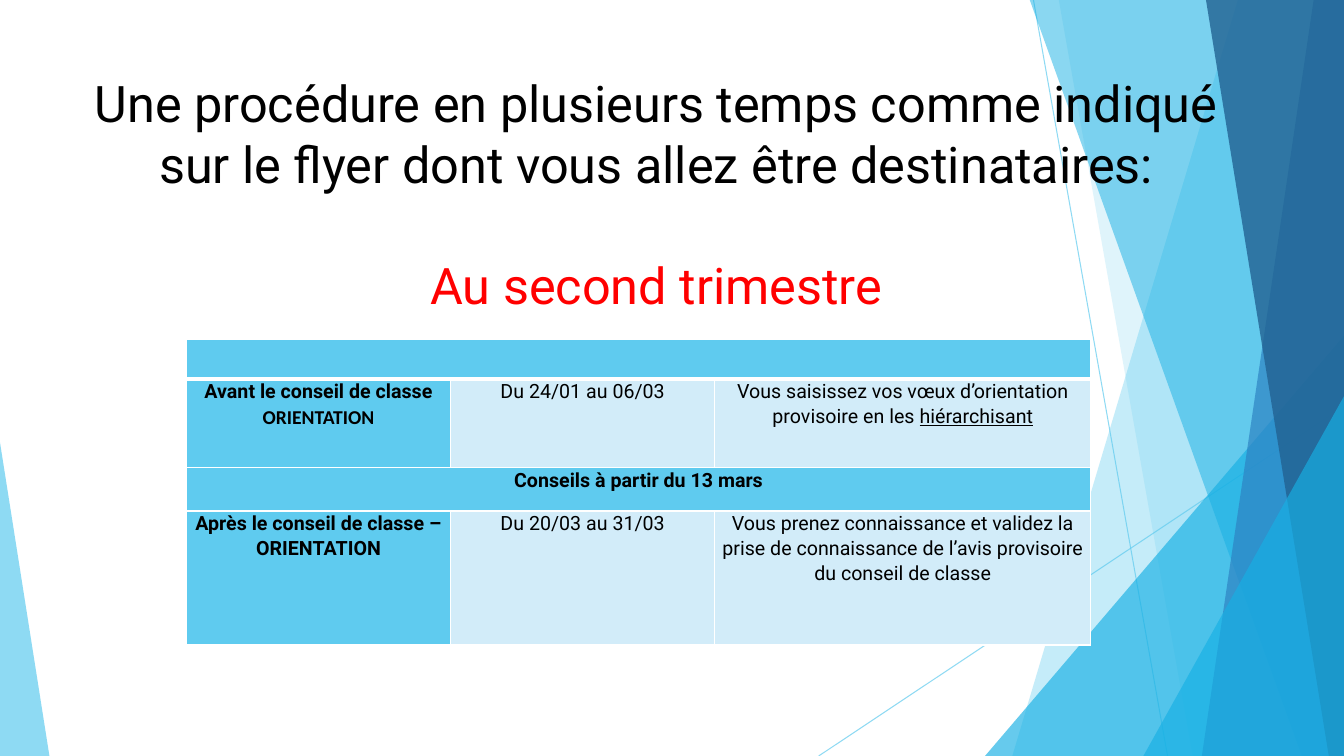
from pptx import Presentation
from pptx import util as u
from pptx.dml.color import RGBColor
from pptx.enum import shapes, text
from pptx.oxml import parse_xml
from pptx.oxml.ns import nsdecls, qn
from lxml import etree

COLORS = {"sky": "5FCBEF", "cyan": "17B0E4", "blue": "2E83C3", "navy": "226292",
          "pale": "D2ECF9", "white": "FFFFFF", "black": "000000", "red": "FF0000"}
WIDTH, HEIGHT = 13.33, 7.5


def rgb(name):
    return RGBColor.from_string(COLORS[name])


def set_alpha(fill, percent):
    """Make a solid shape or line fill partly transparent."""
    color = fill._xPr.find(qn("a:solidFill"))[0]
    etree.SubElement(color, qn("a:alpha")).set("val", str(percent * 1000))


def paint(shape, color, alpha):
    shape.shadow.inherit = False
    shape.fill.solid()
    shape.fill.fore_color.rgb = rgb(color)
    set_alpha(shape.fill, alpha)
    shape.line.fill.background()


def write(para, words, size=14, font="Roboto", color="black", bold=False,
          underline=False, spacing=1.0, before=0):
    """Add a formatted span to a centred paragraph."""
    para.alignment = text.PP_ALIGN.CENTER
    para.line_spacing = spacing
    para.space_before = u.Pt(before)
    span = para.add_run()
    span.text = words
    span.font.size = u.Pt(size)
    span.font.name = font
    span.font.color.rgb = rgb(color)
    span.font.bold = bold
    span.font.underline = underline


# Background decoration
def add_thin_line(page, start, end):
    line = page.shapes.add_connector(
        shapes.MSO_CONNECTOR.STRAIGHT, *(u.Inches(v) for v in start + end))
    line.line.color.rgb = rgb("sky")
    line.line.width = u.Pt(0.75)
    set_alpha(line.line.fill, 70)
    etree.SubElement(line._element.spPr, qn("a:effectLst"))


def add_band(page, top_x, bottom_x, color, alpha):
    """A slanted band reaching the right edge of the page."""
    top = -0.01
    corners = [(WIDTH, top), (WIDTH, HEIGHT), (bottom_x, HEIGHT)]
    outline = page.shapes.build_freeform(u.Inches(top_x), u.Inches(top))
    outline.add_line_segments([(u.Inches(x), u.Inches(y)) for x, y in corners])
    paint(outline.convert_to_shape(), color, alpha)


def add_corner(page, left, top, width, apex, color, alpha):
    """A triangle standing on the bottom edge of the page."""
    corner = page.shapes.add_shape(
        shapes.MSO_SHAPE.ISOSCELES_TRIANGLE, u.Inches(left), u.Inches(top),
        u.Inches(width), u.Inches(HEIGHT - top))
    corner.adjustments[0] = apex
    paint(corner, color, alpha)


def add_decoration(page):
    add_thin_line(page, (10.25, 0), (11.58, HEIGHT))
    add_thin_line(page, (WIDTH, 4.03), (8.12, HEIGHT))
    add_band(page, 12.28, 10.04, "sky", 36)
    add_band(page, 10.5, 11.83, "sky", 20)
    add_corner(page, 9.77, 3.33, 3.56, 1, "cyan", 66)
    add_band(page, 10.21, 12.91, "cyan", 50)
    add_band(page, 13.03, 11.92, "blue", 70)
    add_band(page, 11.96, 13.18, "navy", 80)
    add_corner(page, 11.34, 3.93, 1.99, 1, "cyan", 66)
    add_corner(page, 0, 4.39, 0.49, 0, "sky", 70)


# Title
def add_title(page, left, top, width, height):
    title = page.shapes.title
    title.left, title.top, title.width, title.height = (
        u.Inches(v) for v in (left, top, width, height))
    page.shapes._spTree.append(title._element)  # bring in front of the bands
    frame = title.text_frame
    frame.word_wrap = True
    frame.auto_size = text.MSO_AUTO_SIZE.NONE
    frame.vertical_anchor = text.MSO_ANCHOR.TOP
    write(frame.paragraphs[0], "Une procédure en plusieurs temps comme indiqué "
          "sur le flyer dont vous allez être destinataires:", size=36)
    write(frame.add_paragraph(), "Au second trimestre", size=36, color="red", before=43)


# Schedule table: a cell is a list of paragraphs, a paragraph a list of spans
BOLD = {"bold": True}
SCHEDULE = [
    [[]],
    [[[("Avant le conseil de classe", BOLD)],
      [("ORIENTATION", {"bold": True, "font": "Calibri"})]],
     [[("Du 24/01 au 06/03", {})]],
     [[("Vous saisissez vos vœux d’orientation provisoire en les ", {}),
       ("hiérarchisant", {"underline": True})]]],
    [[[("Conseils à partir du 13 mars", BOLD)]]],
    [[[("Après le conseil de classe –", BOLD)], [("ORIENTATION", BOLD)]],
     [[("Du 20/03 au 31/03", {})]],
     [[("Vous prenez connaissance et validez la prise de connaissance "
        "de l’avis provisoire du conseil de classe", {})]]],
]
COLUMN_WIDTHS = [2.62, 2.62, 3.73]
ROW_HEIGHTS = [0.39, 0.88, 0.43, 1.33]


def format_cell(cell, color, top_border, bottom_border):
    cell.margin_left = cell.margin_right = u.Inches(0.07)
    cell.margin_top = cell.margin_bottom = 0
    properties = cell._tc.get_or_add_tcPr()
    for side, points in zip("LRTB", (1, 1, top_border, bottom_border)):
        properties.append(parse_xml(
            f'<a:ln{side} {nsdecls("a")} w="{u.Pt(points)}"><a:solidFill>'
            f'<a:srgbClr val="{COLORS["white"]}"/></a:solidFill></a:ln{side}>'))
    cell.fill.solid()
    cell.fill.fore_color.rgb = rgb(color)


def add_schedule(page, left, top):
    table = page.shapes.add_table(
        len(ROW_HEIGHTS), len(COLUMN_WIDTHS), u.Inches(left), u.Inches(top),
        u.Inches(sum(COLUMN_WIDTHS)), u.Inches(sum(ROW_HEIGHTS))).table
    for column, width in zip(table.columns, COLUMN_WIDTHS):
        column.width = u.Inches(width)
    last = len(COLUMN_WIDTHS) - 1
    for r, (height, contents) in enumerate(zip(ROW_HEIGHTS, SCHEDULE)):
        table.rows[r].height = u.Inches(height)
        full_width = len(contents) == 1
        for c in range(last + 1):
            format_cell(table.cell(r, c), "sky" if full_width or c == 0 else "pale",
                        3 if r == 1 else 1, 3 if r == 0 else 1)
        if full_width:
            table.cell(r, 0).merge(table.cell(r, last))
        for c, paragraphs in enumerate(contents):
            frame = table.cell(r, c).text_frame
            for i, spans in enumerate(paragraphs):
                para = frame.add_paragraph() if i else frame.paragraphs[0]
                for words, style in spans:
                    write(para, words, spacing=1.07, **style)


def main():
    deck = Presentation()
    deck.slide_width, deck.slide_height = u.Inches(WIDTH), u.Inches(HEIGHT)
    page = deck.slides.add_slide(deck.slide_layouts.get_by_name("Title Only"))
    add_decoration(page)
    add_title(page, 0.74, 0.67, 11.54, 6.17)
    add_schedule(page, 1.85, 3.37)
    deck.save("out.pptx")


if __name__ == "__main__":
    main()
